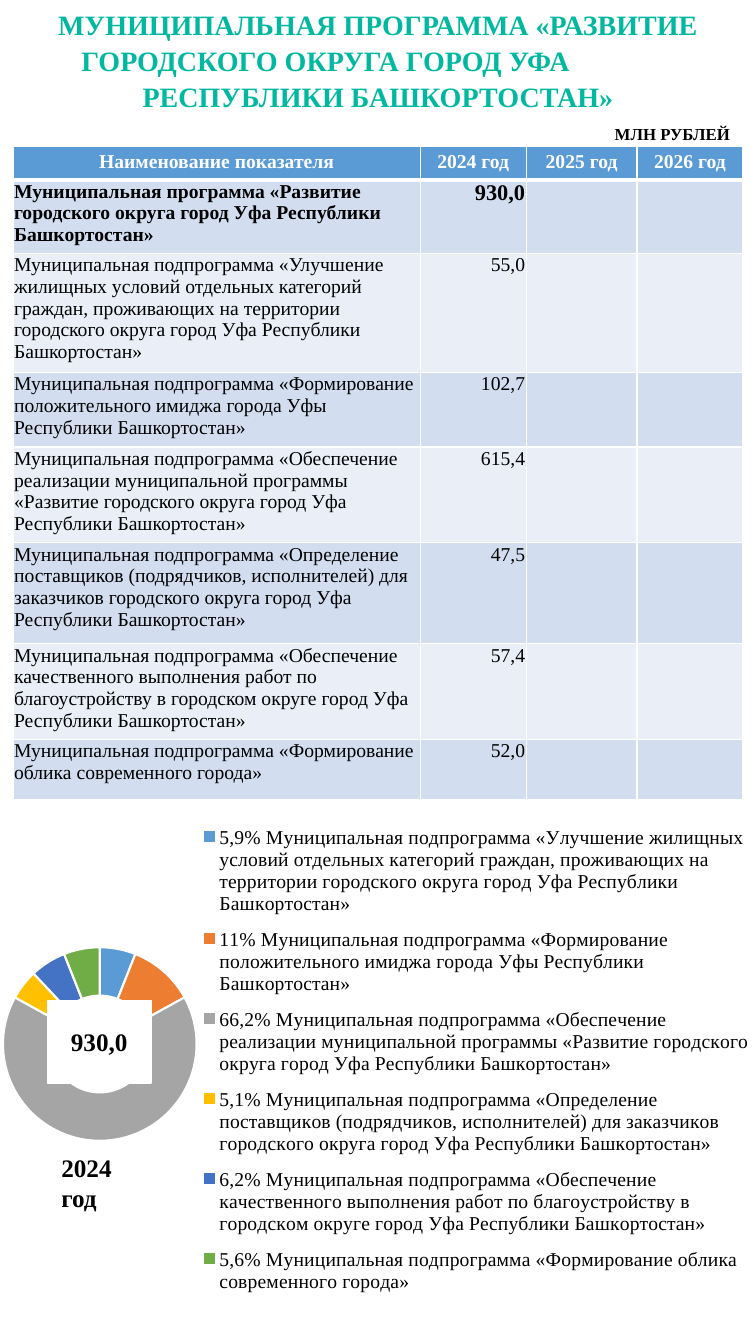
from lxml.etree import SubElement
from pptx import Presentation
from pptx.chart.data import CategoryChartData
from pptx.dml.color import RGBColor
from pptx.enum.chart import XL_CHART_TYPE, XL_LEGEND_POSITION
from pptx.enum.shapes import MSO_SHAPE
from pptx.enum.text import MSO_ANCHOR, PP_ALIGN
from pptx.oxml import parse_xml
from pptx.oxml.ns import nsdecls, qn
from pptx.util import Inches, Pt

SERIF = "Times New Roman"
TITLE = [
    ("МУНИЦИПАЛЬНАЯ ПРОГРАММА «РАЗВИТИЕ", 0),
    ("ГОРОДСКОГО ОКРУГА ГОРОД УФА", 1.04),
    ("РЕСПУБЛИКИ БАШКОРТОСТАН»", 0),
]
UNIT = "МЛН РУБЛЕЙ"
YEAR = "2024 год"
TOTAL = "930,0"
HEADERS = ["Наименование показателя", YEAR, "2025 год", "2026 год"]
PROGRAM = "Муниципальная программа «Развитие городского округа город Уфа Республики Башкортостан»"
SUBPROGRAMS = [
    ("Муниципальная подпрограмма «Улучшение жилищных условий отдельных категорий граждан, "
     "проживающих на территории городского округа город Уфа Республики Башкортостан»",
     "55,0", "5,9%", 6, "5B9BD5"),
    ("Муниципальная подпрограмма «Формирование положительного имиджа города Уфы "
     "Республики Башкортостан»", "102,7", "11%", 11, "ED7D31"),
    ("Муниципальная подпрограмма «Обеспечение реализации муниципальной программы "
     "«Развитие городского округа город Уфа Республики Башкортостан»",
     "615,4", "66,2%", 66, "A5A5A5"),
    ("Муниципальная подпрограмма «Определение поставщиков (подрядчиков, исполнителей) "
     "для заказчиков городского округа город Уфа Республики Башкортостан»",
     "47,5", "5,1%", 5, "FFC000"),
    ("Муниципальная подпрограмма «Обеспечение качественного выполнения работ по "
     "благоустройству в городском округе город Уфа Республики Башкортостан»",
     "57,4", "6,2%", 6, "4472C4"),
    ("Муниципальная подпрограмма «Формирование облика современного города»",
     "52,0", "5,6%", 6, "70AD47"),
]
COLUMN_WIDTHS = [4.04, 1.05, 1.1, 1.05]
ROW_HEIGHTS = [0.32, 0.73, 1.18, 0.74, 0.95, 1, 0.95, 0.6]
HEADER_FILL = "5B9BD5"
BAND_FILLS = ["EAEFF7", "D2DEEF"]
PLOT_LAYOUT = {"x": 0.004, "y": 0.284, "w": 0.256, "h": 0.405}
LEGEND_LAYOUT = {"x": 0.26, "y": 0.07, "w": 0.74, "h": 0.89}


def color(value):
    return RGBColor.from_string(value)


def paint(target, value):
    target.fill.solid()
    target.fill.fore_color.rgb = color(value)


def style(paragraph, size, bold=True, value="000000", align=PP_ALIGN.LEFT):
    paragraph.alignment = align
    font = paragraph.font
    font.name, font.size, font.bold = SERIF, Pt(size), bold
    font.color.rgb = color(value)


def add_label(slide, text, box, size, wrap=True):
    frame = slide.shapes.add_textbox(*map(Inches, box)).text_frame
    frame.word_wrap = wrap
    frame.text = text
    style(frame.paragraphs[0], size)


def add_title(slide):
    frame = slide.shapes.add_textbox(*map(Inches, (0, 0, 7.5, 1.18))).text_frame
    frame.word_wrap = True
    frame.vertical_anchor = MSO_ANCHOR.MIDDLE
    for index, (line, right_indent) in enumerate(TITLE):
        paragraph = frame.add_paragraph() if index else frame.paragraphs[0]
        paragraph.text = line
        paragraph.line_spacing = 1.07
        style(paragraph, 20, value="00B8A0", align=PP_ALIGN.CENTER)
        paragraph._p.get_or_add_pPr().set("marR", str(Inches(right_indent)))


def add_borders(cell, widths):
    properties = cell._tc.get_or_add_tcPr()
    for position, (side, width) in enumerate(widths.items()):
        properties.insert(position, parse_xml(
            f'<a:{side} {nsdecls("a")} w="{Pt(width)}"><a:solidFill>'
            f'<a:srgbClr val="FFFFFF"/></a:solidFill></a:{side}>'))


def add_budget_table(slide):
    rows = [HEADERS, [PROGRAM, TOTAL, "", ""]]
    rows += [[name, amount, "", ""] for name, amount, *_ in SUBPROGRAMS]
    table = slide.shapes.add_table(
        len(rows), len(HEADERS), Inches(0.13), Inches(1.45),
        Inches(sum(COLUMN_WIDTHS)), Inches(sum(ROW_HEIGHTS))).table
    for column, width in zip(table.columns, COLUMN_WIDTHS):
        column.width = Inches(width)
    for row, height in zip(table.rows, ROW_HEIGHTS):
        row.height = Inches(height)
    for r, values in enumerate(rows):
        for c, value in enumerate(values):
            cell = table.cell(r, c)
            paint(cell, BAND_FILLS[r % 2] if r else HEADER_FILL)
            add_borders(cell, {"lnL": 1, "lnR": 1, "lnT": 3 if r == 1 else 1,
                               "lnB": 1 if r else 3})
            cell.text = value
            paragraph = cell.text_frame.paragraphs[0]
            if r == 0:
                style(paragraph, 14, value="FFFFFF", align=PP_ALIGN.CENTER)
                continue
            cell.margin_left = cell.margin_right = cell.margin_top = Inches(0.01)
            cell.margin_bottom = 0
            style(paragraph, 16 if r == 1 and c else 14, bold=r == 1,
                  align=PP_ALIGN.RIGHT if c else PP_ALIGN.LEFT)


def set_layout(layout, box, inner=False):
    manual = SubElement(layout, qn("c:manualLayout"))
    settings = {"layoutTarget": "inner"} if inner else {}
    settings |= {"xMode": "edge", "yMode": "edge"} | box
    for tag, value in settings.items():
        SubElement(manual, qn(f"c:{tag}")).set("val", str(value))


def add_share_chart(slide):
    data = CategoryChartData()
    data.categories = [f"{share} {name}" for name, _, share, *_ in SUBPROGRAMS]
    data.add_series("Series 1", [value for *_, value, _ in SUBPROGRAMS])
    chart = slide.shapes.add_chart(
        XL_CHART_TYPE.DOUGHNUT, *map(Inches, (0, 7.68, 7.5, 5.5)), data).chart
    chart.has_title = False
    chart.font.name, chart.font.size = "Calibri", Pt(10)
    chart.font.color.rgb = color("000000")
    chart.has_legend = True
    legend = chart.legend
    legend.position = XL_LEGEND_POSITION.RIGHT
    legend.include_in_layout = False
    legend.font.name, legend.font.size = SERIF, Pt(14)
    legend.font.color.rgb = color("000000")
    plot = chart.plots[0]
    plot.vary_by_categories = True
    for index, (*_, fill) in enumerate(SUBPROGRAMS):
        point = plot.series[0].points[index].format
        paint(point, fill)
        point.line.color.rgb = color("FFFFFF")
        point.line.width = Pt(1.5)
    plot._element.find(qn("c:holeSize")).set("val", "75")
    plot_area = plot._element.getparent()
    layout = plot_area.find(qn("c:layout"))
    if layout is None:
        layout = parse_xml(f'<c:layout {nsdecls("c")}/>')
        plot_area.insert(0, layout)
    set_layout(layout, PLOT_LAYOUT, inner=True)
    legend_layout = legend._element.find(qn("c:layout"))
    if legend_layout is None:
        legend_layout = parse_xml(f'<c:layout {nsdecls("c")}/>')
        legend._element.find(qn("c:legendPos")).addnext(legend_layout)
    set_layout(legend_layout, LEGEND_LAYOUT)


def add_total(slide):
    shape = slide.shapes.add_shape(
        MSO_SHAPE.RECTANGLE, *map(Inches, (0.47, 9.92, 1.03, 0.82)))
    shape.shadow.inherit = False
    paint(shape, "FFFFFF")
    shape.line.color.rgb = color("FFFFFF")
    shape.line.width = Pt(1)
    shape.text_frame.vertical_anchor = MSO_ANCHOR.MIDDLE
    shape.text_frame.text = TOTAL
    style(shape.text_frame.paragraphs[0], 18, align=PP_ALIGN.CENTER)


def main():
    presentation = Presentation()
    presentation.slide_width, presentation.slide_height = Inches(7.5), Inches(13.33)
    slide = presentation.slides.add_slide(presentation.slide_layouts[6])
    add_title(slide)
    add_budget_table(slide)
    add_share_chart(slide)
    add_total(slide)
    add_label(slide, YEAR, (0.51, 11.38, 1, 0.45), 18, wrap=False)
    add_label(slide, UNIT, (6, 1.18, 1.5, 0.3), 12)
    presentation.save("out.pptx")


if __name__ == "__main__":
    main()
